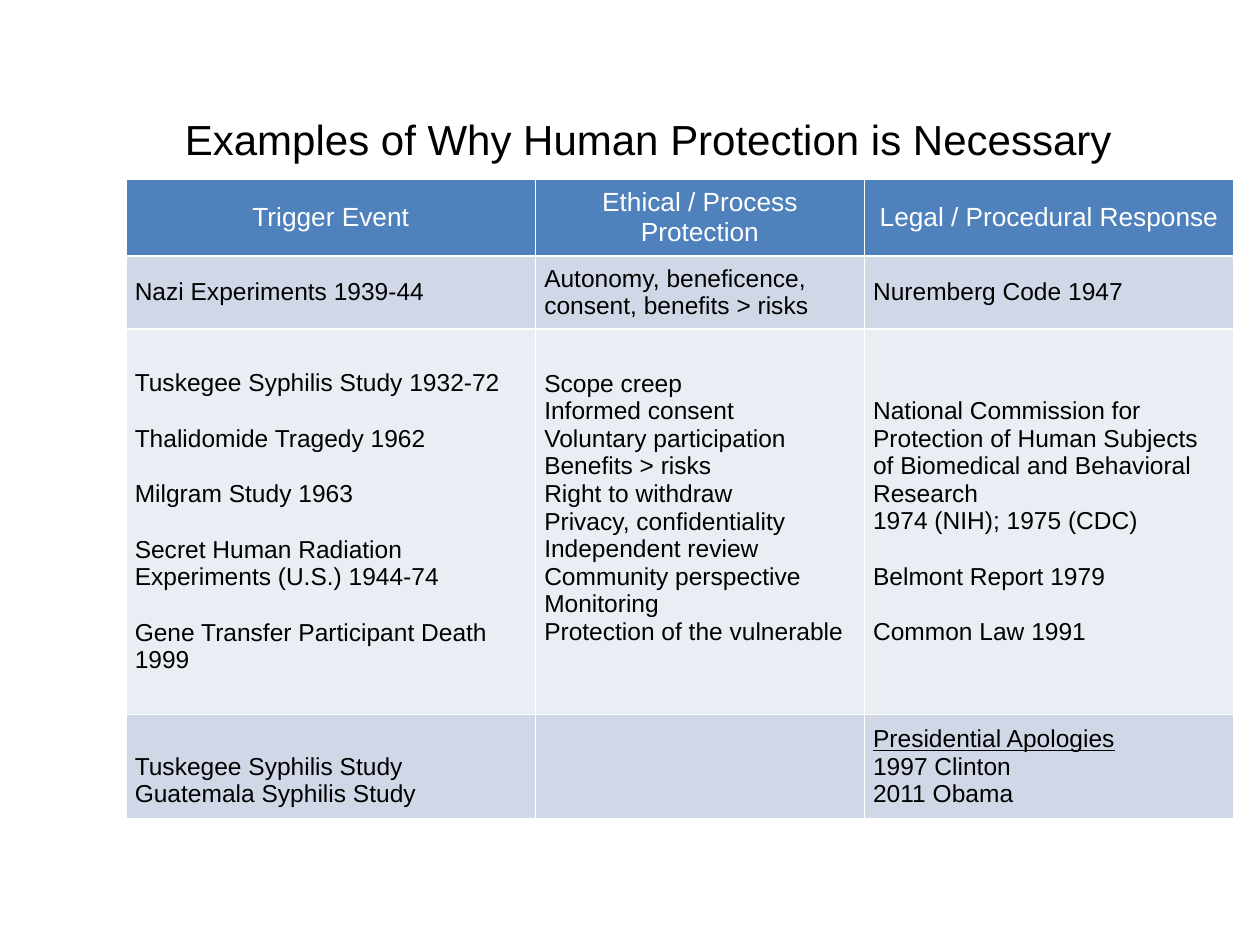
import dataclasses

import lxml.etree
import pptx
import pptx.dml.color
import pptx.enum.text
import pptx.oxml.ns
import pptx.util

ALIGN = pptx.enum.text.PP_ALIGN
ANCHOR = pptx.enum.text.MSO_ANCHOR


@dataclasses.dataclass(frozen=True)
class Theme:
    font: str = "Arial"
    title_size: float = 24
    header_size: float = 15
    body_size: float = 14
    group_gap: float = 16
    border_width: float = 1
    dark: str = "000000"
    light: str = "FFFFFF"
    header_fill: str = "4F81BD"
    band_fills: tuple = ("D0D8E8", "E9EDF4")


THEME = Theme()

# The slide is a grid of square units
GRID_COLUMNS, GRID_ROWS = 1000, 750
UNIT = pptx.util.Inches(10) // GRID_COLUMNS
TITLE_BOX = (75, 85, 879, 84)
TABLE_BOX = (100, 142, 879, 508)
COLUMN_UNITS = (325, 261, 293)
ROW_UNITS = (61, 58, 306, 83)
SIDE_MARGIN, END_MARGIN, LINE_UNITS = 7, 4, 22

TITLE = "Examples of Why Human Protection is Necessary"
HEADERS = ("Trigger Event", "Ethical / Process Protection", "Legal / Procedural Response")

# Each cell holds groups of lines, with a gap between groups
BODY = [
    [
        [["Nazi Experiments 1939-44"]],
        [["Autonomy, beneficence, consent, benefits > risks"]],
        [["Nuremberg Code 1947"]],
    ],
    [
        [
            ["Tuskegee Syphilis Study 1932-72"],
            ["Thalidomide Tragedy 1962"],
            ["Milgram Study 1963"],
            ["Secret Human Radiation Experiments (U.S.) 1944-74"],
            ["Gene Transfer Participant Death 1999"],
        ],
        [[
            "Scope creep",
            "Informed consent",
            "Voluntary participation",
            "Benefits > risks",
            "Right to withdraw",
            "Privacy, confidentiality",
            "Independent review Community perspective Monitoring",
            "Protection of the vulnerable",
        ]],
        [
            [
                "National Commission for Protection of Human Subjects "
                "of Biomedical and Behavioral Research",
                "1974 (NIH); 1975 (CDC)",
            ],
            ["Belmont Report 1979"],
            ["Common Law 1991"],
        ],
    ],
    [
        [["Tuskegee Syphilis Study", "Guatemala Syphilis Study"]],
        [],
        [["Presidential Apologies", "1997 Clinton", "2011 Obama"]],
    ],
]


def apply_format(target, values):
    for name, value in values.items():
        setattr(target, name, value)


def place(box):
    return [units * UNIT for units in box]


def format_font(font, size, color):
    apply_format(font, {"name": THEME.font, "size": pptx.util.Pt(size), "bold": False})
    font.color.rgb = pptx.dml.color.RGBColor.from_string(color)


def add_title(slide, box):
    title = slide.shapes.title
    apply_format(title, dict(zip(("left", "top", "width", "height"), place(box))))
    frame = title.text_frame
    apply_format(frame, {"text": TITLE, "word_wrap": True, "vertical_anchor": ANCHOR.TOP})
    paragraph = frame.paragraphs[0]
    paragraph.alignment = ALIGN.CENTER
    format_font(paragraph.font, THEME.title_size, THEME.dark)


def style_cell(cell, fill):
    apply_format(cell, {
        "vertical_anchor": ANCHOR.MIDDLE,
        "margin_left": SIDE_MARGIN * UNIT,
        "margin_right": SIDE_MARGIN * UNIT,
        "margin_top": END_MARGIN * UNIT,
        "margin_bottom": END_MARGIN * UNIT,
    })
    # Borders come before the fill in the cell properties
    properties = cell._tc.get_or_add_tcPr()
    qn = pptx.oxml.ns.qn
    for side in ("a:lnL", "a:lnR", "a:lnT", "a:lnB"):
        line = lxml.etree.SubElement(
            properties, qn(side), w=str(pptx.util.Pt(THEME.border_width)))
        solid = lxml.etree.SubElement(line, qn("a:solidFill"))
        lxml.etree.SubElement(solid, qn("a:srgbClr"), val=THEME.light)
    cell.fill.solid()
    cell.fill.fore_color.rgb = pptx.dml.color.RGBColor.from_string(fill)


def write_groups(cell, groups, size, color, alignment):
    frame = cell.text_frame
    lines = [(text, group > 0 and line == 0)
             for group, texts in enumerate(groups) for line, text in enumerate(texts)]
    for index, (text, has_gap) in enumerate(lines):
        paragraph = frame.add_paragraph() if index else frame.paragraphs[0]
        apply_format(paragraph, {"text": text, "alignment": alignment})
        if has_gap:
            paragraph.space_before = pptx.util.Pt(THEME.group_gap)
        format_font(paragraph.runs[0].font, size, color)


def add_events_table(slide, box):
    frame = slide.shapes.add_table(len(ROW_UNITS), len(COLUMN_UNITS), *place(box))
    table = frame.table
    for column, units in zip(table.columns, COLUMN_UNITS):
        column.width = units * UNIT
    for row, units in zip(table.rows, ROW_UNITS):
        row.height = units * UNIT

    # Header row
    for index, text in enumerate(HEADERS):
        cell = table.cell(0, index)
        style_cell(cell, THEME.header_fill)
        write_groups(cell, [[text]], THEME.header_size, THEME.light, ALIGN.CENTER)

    # Banded body rows
    for row, cells in enumerate(BODY):
        for column, groups in enumerate(cells):
            cell = table.cell(row + 1, column)
            style_cell(cell, THEME.band_fills[row % 2])
            write_groups(cell, groups, THEME.body_size, THEME.dark, ALIGN.LEFT)

    # Cells set one line off centre, and the underlined heading
    table.cell(2, 1).margin_bottom = (END_MARGIN + LINE_UNITS) * UNIT
    table.cell(3, 0).margin_top = (END_MARGIN + LINE_UNITS) * UNIT
    table.cell(3, 2).text_frame.paragraphs[0].runs[0].font.underline = True


def main():
    presentation = pptx.Presentation()
    apply_format(presentation, {
        "slide_width": GRID_COLUMNS * UNIT, "slide_height": GRID_ROWS * UNIT})
    slide = presentation.slides.add_slide(presentation.slide_layouts[5])
    add_title(slide, TITLE_BOX)
    add_events_table(slide, TABLE_BOX)
    presentation.save("out.pptx")


if __name__ == "__main__":
    main()
